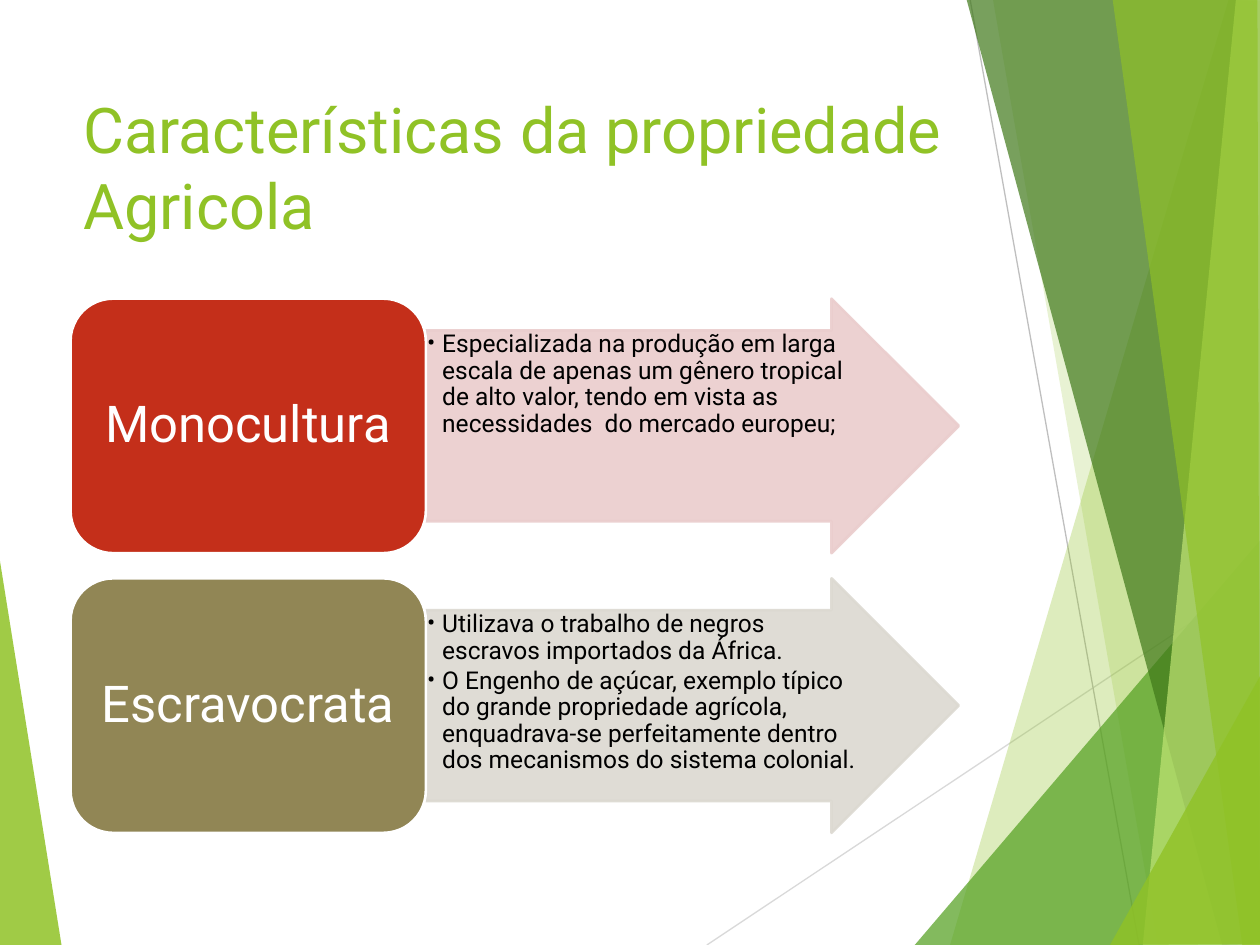
import dataclasses
import typing

import lxml.etree
import pptx
import pptx.dml.color
import pptx.enum.shapes
import pptx.enum.text
import pptx.oxml.ns
import pptx.util

Inches = pptx.util.Inches
Point = tuple[float, float]
SHAPE = pptx.enum.shapes.MSO_SHAPE
ALIGN = pptx.enum.text.PP_ALIGN
ANCHOR = pptx.enum.text.MSO_ANCHOR

COLORS = {
    "lime": "90C226",
    "green": "54A021",
    "dark green": "3F7819",
    "pale lime": "C0E474",
    "light gray": "D9D9D9",
    "gray": "BFBFBF",
    "red": "C42F1A",
    "pale red": "EACDCD",
    "olive": "918655",
    "pale olive": "DCD9D1",
    "white": "FFFFFF",
    "black": "000000",
}


@dataclasses.dataclass
class Facet:
    points: list[Point]
    color: str
    opacity: int


@dataclasses.dataclass
class Ray:
    start: Point
    end: Point
    color: str


@dataclasses.dataclass
class Feature:
    label: str
    details: list[str]
    color: str
    arrow_color: str


LEFT_FACET = Facet([(-0.01, 4.39), (0.49, 7.51), (-0.01, 7.5)], "lime", 85)
RAYS = [
    Ray((5.61, 7.5), (10.01, 4.57), "light gray"),
    Ray((7.7, 0), (9.04, 7.5), "gray"),
]
RIGHT_FACETS = [
    Facet([(9.75, 0), (7.54, 7.5), (10.02, 7.51), (10.01, 0.01)], "lime", 30),
    Facet([(7.88, -0.01), (9.19, 7.5), (10.01, 7.5), (10.01, -0.01)], "lime", 20),
    Facet([(7.26, 7.5), (10, 4.29), (10.01, 7.5)], "green", 72),
    Facet([(7.67, -0.01), (9.7, 7.5), (10.01, 7.49), (10.01, -0.01)], "dark green", 70),
    Facet([(9.81, -0.01), (9.07, 7.5), (10.01, 7.5), (10, -0.01)], "pale lime", 70),
    Facet([(8.83, -0.01), (9.86, 7.5), (10, 7.5), (9.98, -0.01)], "lime", 65),
    Facet([(8.81, 7.5), (10.01, 5.35), (10.01, 7.49)], "lime", 80),
]
FEATURES = [
    Feature(
        "Monocultura",
        ["Especializada na produção em larga escala de apenas um gênero tropical "
         "de alto valor, tendo em vista as necessidades  do mercado europeu;"],
        "red", "pale red",
    ),
    Feature(
        "Escravocrata",
        ["Utilizava o trabalho de negros escravos importados da África.",
         "O Engenho de açúcar, exemplo típico do grande propriedade agrícola, "
         "enquadrava-se perfeitamente dentro dos mecanismos do sistema colonial."],
        "olive", "pale olive",
    ),
]
LEFT, LABEL_WIDTH, ARROW_WIDTH = 0.56, 2.82, 4.23
TOP, ROW_HEIGHT, ROW_STEP = 2.37, 2.02, 2.22


def rgb(color: str) -> pptx.dml.color.RGBColor:
    return pptx.dml.color.RGBColor.from_string(COLORS[color])


def set_opacity(properties: typing.Any, percent: int) -> None:
    for color in properties.iter(pptx.oxml.ns.qn("a:srgbClr")):
        alpha = lxml.etree.SubElement(color, pptx.oxml.ns.qn("a:alpha"))
        alpha.set("val", str(percent * 1000))


def paint(shape: typing.Any, fill: str, line: str | None = None, opacity: int = 100) -> None:
    shape.shadow.inherit = False
    shape.fill.solid()
    shape.fill.fore_color.rgb = rgb(fill)
    if line:
        shape.line.color.rgb = rgb(line)
        shape.line.width = pptx.util.Pt(1.5)
    else:
        shape.line.fill.background()
    if opacity < 100:
        set_opacity(shape.element.spPr, opacity)


def write_text(shape: typing.Any, texts: list[str], *, size: float, color: str,
               align: typing.Any = ALIGN.LEFT, anchor: typing.Any = ANCHOR.TOP,
               insets: tuple[float, float, float, float] = (0.1, 0.05, 0.1, 0.05),
               line_spacing: float = 1.0, space_after: float = 0,
               bullet: bool = False) -> None:
    frame = shape.text_frame
    frame.word_wrap = True
    frame.auto_size = pptx.enum.text.MSO_AUTO_SIZE.NONE
    frame.vertical_anchor = anchor
    (frame.margin_left, frame.margin_top,
     frame.margin_right, frame.margin_bottom) = map(Inches, insets)
    for index, text in enumerate(texts):
        paragraph = frame.add_paragraph() if index else frame.paragraphs[0]
        paragraph.alignment = align
        paragraph.line_spacing = line_spacing
        paragraph.space_after = pptx.util.Pt(space_after)
        run = paragraph.add_run()
        run.text = text
        run.font.name = "Roboto"
        run.font.size = pptx.util.Pt(size)
        run.font.color.rgb = rgb(color)
        if bullet:
            properties = paragraph._p.get_or_add_pPr()
            properties.set("marL", str(Inches(0.12)))
            properties.set("indent", str(Inches(-0.12)))
            for tag, name, value in (("a:buFont", "typeface", "Roboto"),
                                     ("a:buChar", "char", "•")):
                lxml.etree.SubElement(properties, pptx.oxml.ns.qn(tag)).set(name, value)


def draw_facet(slide: typing.Any, facet: Facet) -> None:
    corners = [(Inches(x), Inches(y)) for x, y in facet.points]
    builder = slide.shapes.build_freeform(*corners[0])
    builder.add_line_segments(corners[1:], close=True)
    paint(builder.convert_to_shape(), facet.color, opacity=facet.opacity)


def draw_ray(slide: typing.Any, ray: Ray) -> None:
    connector = slide.shapes.add_connector(
        pptx.enum.shapes.MSO_CONNECTOR.STRAIGHT, *map(Inches, ray.start + ray.end))
    connector.line.color.rgb = rgb(ray.color)
    connector.line.width = pptx.util.Pt(0.75)
    lxml.etree.SubElement(connector.element.spPr, pptx.oxml.ns.qn("a:effectLst"))


def draw_feature(slide: typing.Any, feature: Feature, top: float) -> None:
    arrow = slide.shapes.add_shape(
        SHAPE.RIGHT_ARROW, Inches(LEFT + LABEL_WIDTH), Inches(top),
        Inches(ARROW_WIDTH), Inches(ROW_HEIGHT))
    arrow.adjustments[0], arrow.adjustments[1] = 0.75, 0.5
    paint(arrow, feature.arrow_color, feature.arrow_color, opacity=90)
    write_text(arrow, feature.details, size=14, color="black",
               insets=(0.01, 0.01, 0.01, 0.01), line_spacing=0.9,
               space_after=2.1, bullet=True)

    label = slide.shapes.add_shape(
        SHAPE.ROUNDED_RECTANGLE, Inches(LEFT), Inches(top),
        Inches(LABEL_WIDTH), Inches(ROW_HEIGHT))
    paint(label, feature.color, "white")
    write_text(label, [feature.label], size=29, color="white", align=ALIGN.CENTER,
               anchor=ANCHOR.MIDDLE, line_spacing=0.9)


def main() -> None:
    presentation = pptx.Presentation()
    presentation.slide_width, presentation.slide_height = Inches(10), Inches(7.5)
    slide = presentation.slides.add_slide(presentation.slide_layouts[5])

    draw_facet(slide, LEFT_FACET)
    for ray in RAYS:
        draw_ray(slide, ray)
    for facet in RIGHT_FACETS:
        draw_facet(slide, facet)

    title = slide.shapes.title
    slide.shapes.element.append(title.element)
    title.left, title.top = Inches(LEFT), Inches(0.67)
    title.width, title.height = Inches(7.05), Inches(1.44)
    write_text(title, ["Características da propriedade Agricola"], size=36, color="lime")

    for row, feature in enumerate(FEATURES):
        draw_feature(slide, feature, TOP + row * ROW_STEP)

    presentation.save("out.pptx")


if __name__ == "__main__":
    main()
